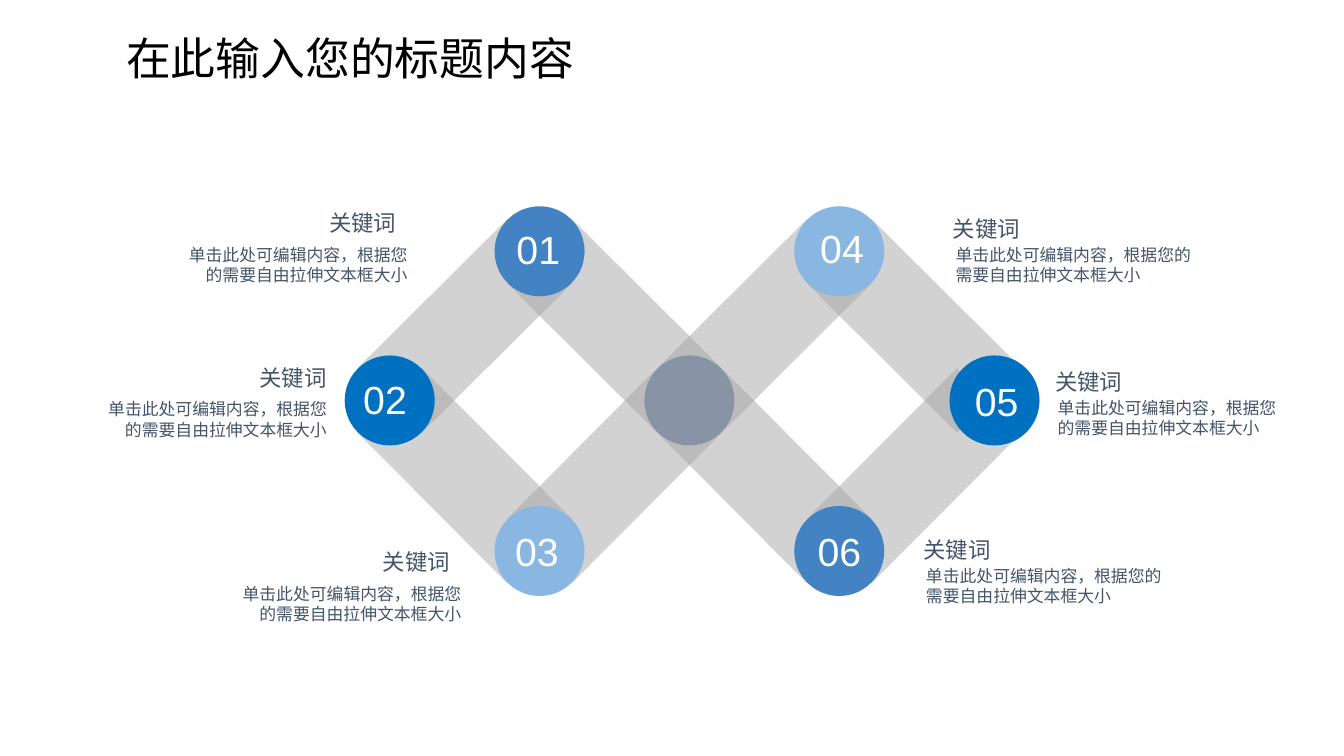
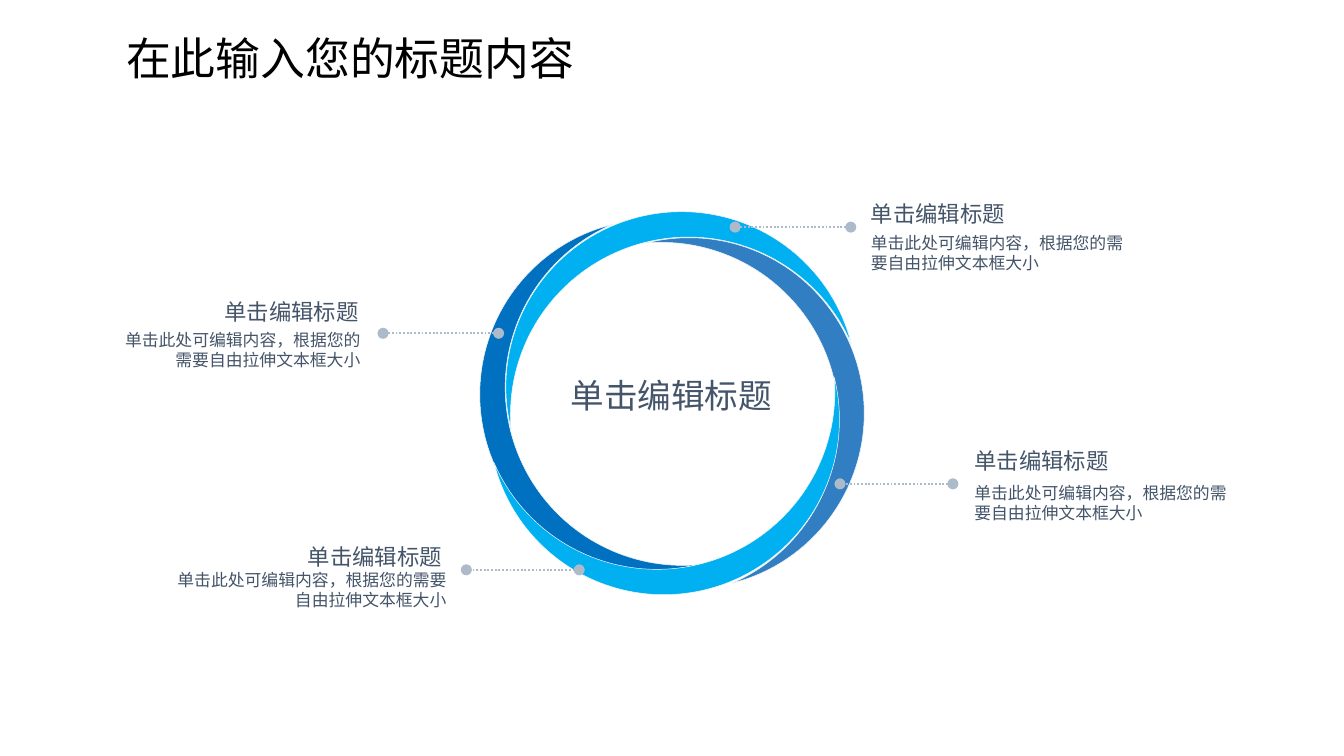
from lxml.etree import SubElement
from pptx import Presentation
from pptx.dml.color import RGBColor
from pptx.enum.dml import MSO_LINE
from pptx.enum.shapes import MSO_CONNECTOR, MSO_SHAPE
from pptx.enum.text import MSO_ANCHOR, MSO_AUTO_SIZE, PP_ALIGN
from pptx.oxml.ns import qn
from pptx.util import Inches, Pt

NAVY, BLUE, SKY = "0070C0", "4383C3", "89B7E1"
CYAN, MID_BLUE = "00B0F0", "327EC3"
SLATE, GRAY, CALLOUT, INK = "8893A5", "A6A6A6", "ADBACA", "445469"
WHITE, BLACK, EDGE = "FFFFFF", "000000", "F8F8F8"
LEFT, CENTER, RIGHT = PP_ALIGN.LEFT, PP_ALIGN.CENTER, PP_ALIGN.RIGHT
BODY = "单击此处可编辑内容，根据您的需要自由拉伸文本框大小"


def rgb(value):
    return RGBColor.from_string(value)


def add_text(slide, box, words, size, color=INK, align=LEFT, inset=(0, 0), anchor=MSO_ANCHOR.TOP):
    frame = slide.shapes.add_textbox(*map(Inches, box)).text_frame
    frame.word_wrap = True
    frame.auto_size = MSO_AUTO_SIZE.SHAPE_TO_FIT_TEXT
    frame.vertical_anchor = anchor
    frame.margin_left = frame.margin_right = Inches(inset[0])
    frame.margin_top = frame.margin_bottom = Inches(inset[1])
    paragraph = frame.paragraphs[0]
    paragraph.text = words
    paragraph.alignment = align
    paragraph.font.name = "Arial"
    paragraph.font.size = Pt(size)
    paragraph.font.color.rgb = rgb(color)


prs = Presentation()
prs.slide_width = Inches(10)
prs.slide_height = prs.slide_width * 9 // 16
lattice, ring = [prs.slides.add_slide(prs.slide_layouts[6]) for _ in range(2)]
for slide in (lattice, ring):
    add_text(slide, (0.84, 0.18, 4.09, 0.5), "在此输入您的标题内容", 24, BLACK, inset=(0.1, 0.05))

columns = [2.9 + 4.46 / 4 * i for i in range(5)]
top, middle, bottom = 1.87, 2.98, 4.1
half = 0.24
for i in (3, 2, 1, 0):
    left, right = columns[i], columns[i + 1]
    falling = [(middle, bottom), (top, middle)][i % 2]
    rising = [(middle, top), (bottom, middle)][i % 2]
    for (start, end), dx in ((falling, half), (rising, -half)):
        corners = [(left + dx, start - half), (right + dx, end - half),
                   (right - dx, end + half), (left - dx, start + half)]
        points = [(Inches(x), Inches(y)) for x, y in corners]
        builder = lattice.shapes.build_freeform(*points[0])
        builder.add_line_segments(points[1:], close=True)
        bar = builder.convert_to_shape()
        bar.shadow.inherit = False
        bar.fill.solid()
        bar.fill.fore_color.rgb = rgb(GRAY)
        bar.line.fill.background()
        tint = bar.element.spPr.find(qn("a:solidFill"))[0]
        SubElement(tint, qn("a:alpha"), val="50000")

diameter = 0.67
nodes = [
    (columns[0], middle, NAVY), (columns[1], top, BLUE), (columns[1], bottom, SKY),
    (columns[2], middle, SLATE), (columns[3], top, SKY), (columns[3], bottom, BLUE),
    (7.4, middle, NAVY),
]
for x, y, color in nodes:
    node = lattice.shapes.add_shape(
        MSO_SHAPE.OVAL, Inches(x - diameter / 2), Inches(y - diameter / 2),
        Inches(diameter), Inches(diameter))
    node.shadow.inherit = False
    node.fill.solid()
    node.fill.fore_color.rgb = rgb(color)
    node.line.fill.background()

numbers = [(3.75, 1.68), (2.61, 2.79), (3.74, 3.92), (6.01, 1.67), (7.16, 2.81), (5.99, 3.92)]
for i, (x, y) in enumerate(numbers, 1):
    add_text(lattice, (x, y, 0.51, 0.35), f"{i:02}", 21, WHITE, CENTER, anchor=MSO_ANCHOR.MIDDLE)

for x, y, heading_x in ((1.36, 1.56, 2.37), (0.76, 2.71, 1.85), (1.76, 4.08, 2.77)):
    add_text(lattice, (heading_x, y, 0.66, 0.2), "关键词", 12, align=CENTER)
    add_text(lattice, (x, y + 0.26, 1.67, 0.3), BODY, 9, align=RIGHT)
for x, y, width in ((7.03, 1.6, 1.84), (7.79, 2.74, 1.74), (6.81, 3.99, 1.8)):
    add_text(lattice, (x, y, 0.62, 0.2), "关键词", 12, align=CENTER)
    add_text(lattice, (x + 0.08, y + 0.22, width, 0.3), BODY, 9)

crescents = [(3.59, 1.79, NAVY), (4.26, 0.94, CYAN), (5.11, 1.61, MID_BLUE), (4.45, 2.45, CYAN)]
for i, (x, y, color) in enumerate(crescents):
    crescent = ring.shapes.add_shape(MSO_SHAPE.MOON, Inches(x), Inches(y), Inches(1.3), Inches(2.61))
    crescent.adjustments[0] = 0.15
    crescent.rotation = (345.9 + 90 * i) % 360
    crescent.shadow.inherit = False
    crescent.fill.solid()
    crescent.fill.fore_color.rgb = rgb(color)
    crescent.line.color.rgb = rgb(EDGE)
    crescent.line.width = Pt(0.25)
add_text(ring, (4.13, 2.75, 1.73, 0.38), "单击编辑标题", 18, align=CENTER, inset=(0.07, 0.04))

callouts = [
    (3.71, 2.85, 2.48, (1.07, 2.22, 1.6, 0.2), (0.87, 2.45, 1.81, 0.3), RIGHT),
    (4.31, 3.47, 4.24, (1.69, 4.04, 1.6, 0.2), (1.32, 4.24, 2, 0.3), RIGHT),
    (6.33, 5.47, 1.69, (6.48, 1.49, 1.03, 0.2), (6.48, 1.73, 1.96, 0.3), LEFT),
    (7.09, 6.25, 3.6, (7.25, 3.33, 1.6, 0.2), (7.25, 3.59, 1.93, 0.3), LEFT),
]
for start, end, y, heading_box, body_box, align in callouts:
    leader = ring.shapes.add_connector(
        MSO_CONNECTOR.STRAIGHT, Inches(start), Inches(y), Inches(end), Inches(y))
    leader.line.color.rgb = rgb(CALLOUT)
    leader.line.width = Pt(1)
    leader.line.dash_style = MSO_LINE.ROUND_DOT
    properties = leader.element.spPr
    for tip in ("a:headEnd", "a:tailEnd"):
        SubElement(properties.find(qn("a:ln")), qn(tip), type="oval")
    SubElement(properties, qn("a:effectLst"))
    add_text(ring, heading_box, "单击编辑标题", 12, align=align)
    add_text(ring, body_box, BODY, 9, align=align)

prs.save("out.pptx")
